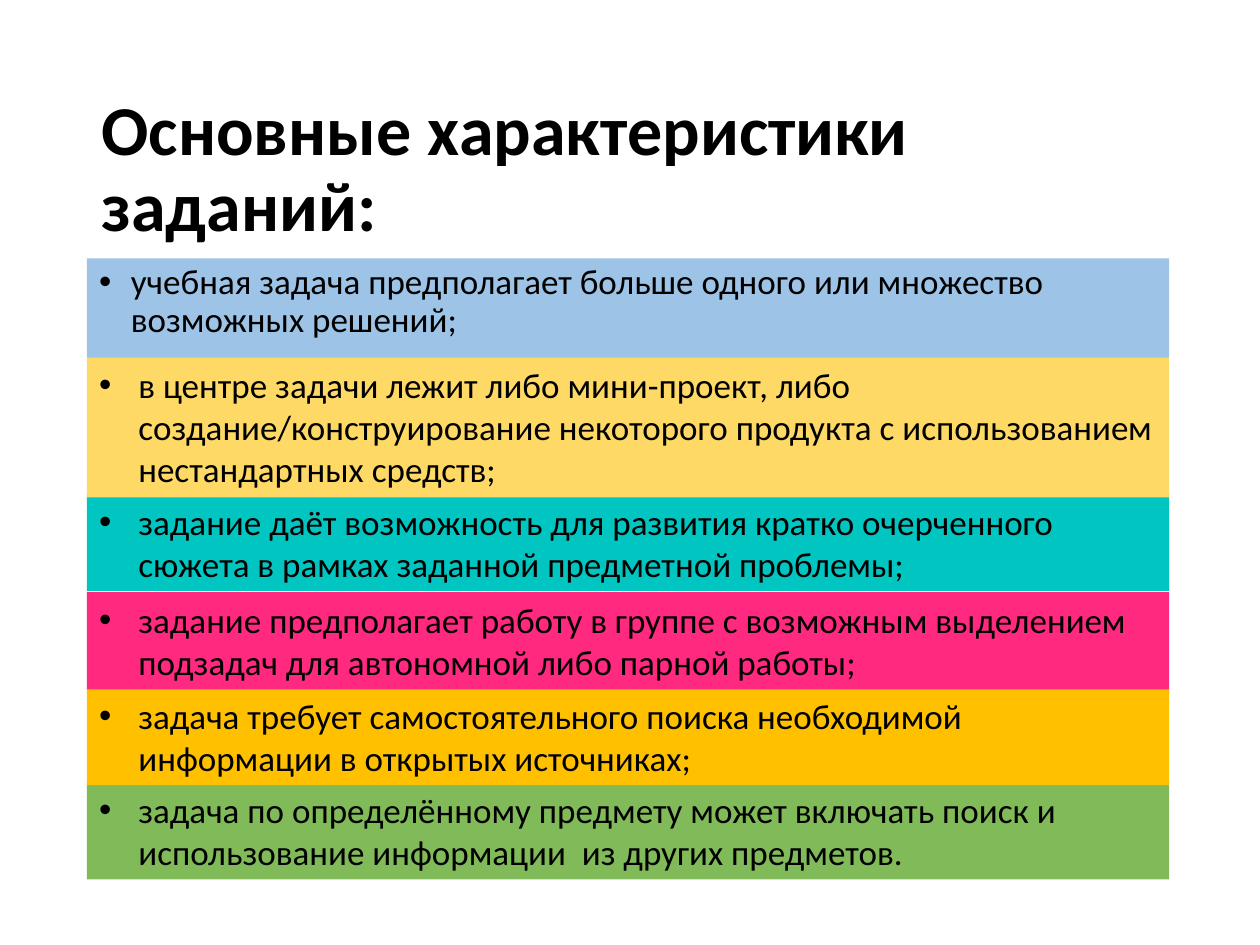
from lxml.etree import SubElement
from pptx import Presentation
from pptx.dml.color import RGBColor
from pptx.enum.shapes import MSO_SHAPE as Shape
from pptx.enum.text import MSO_ANCHOR as Anchor, PP_ALIGN as Align
from pptx.oxml.ns import qn
from pptx.util import Cm, Pt


def color(value):
    return RGBColor.from_string(value)


def write_text(shape, text, anchor, font_format, line_spacing, indent=0):
    """Fill the shape with one paragraph, bulleted when an indent (cm) is given."""
    frame = shape.text_frame
    frame.word_wrap = True
    frame.vertical_anchor = anchor
    paragraph = frame.paragraphs[0]
    paragraph.text = text
    paragraph.alignment = Align.LEFT
    paragraph.line_spacing = line_spacing
    if indent:
        properties = paragraph._p.get_or_add_pPr()
        properties.set("marL", str(Cm(indent)))
        properties.set("indent", str(-Cm(indent)))
        SubElement(properties, qn("a:buFont"), typeface="Arial")
        SubElement(properties, qn("a:buChar"), char="•")
    for name, value in font_format.items():
        setattr(paragraph.font, name, value)
    paragraph.font.color.rgb = color("000000")


TITLE_FONT = {"name": "Calibri", "size": Pt(40), "bold": True}
BAND_FONT = {"name": "Calibri", "size": Pt(20)}
BAND_LEFT, BAND_WIDTH = 1.75, 21.82

# top, height, fill, line spacing, indent, text; lower bands lie behind upper ones
BANDS = [
    (5.21, 2.01, "9DC3E6", 0.9, 0.64,
     "учебная задача предполагает больше одного или множество возможных решений;"),
    (15.77, 1.96, "81BB59", 1, 0.79,
     "задача по определённому предмету может включать поиск и "
     "использование информации  из других предметов."),
    (13.87, 1.96, "FFC000", 1, 0.79,
     "задача требует самостоятельного поиска необходимой "
     "информации в открытых источниках;"),
    (11.94, 1.96, "FF2980", 1, 0.79,
     "задание предполагает работу в группе с возможным выделением "
     "подзадач для автономной либо парной работы;"),
    (9.96, 1.96, "00C5C0", 1, 0.79,
     "задание даёт возможность для развития кратко очерченного "
     "сюжета в рамках заданной предметной проблемы;"),
    (7.21, 2.82, "FFD966", 1, 0.79,
     "в центре задачи лежит либо мини-проект, либо "
     "создание/конструирование некоторого продукта с использованием "
     "нестандартных средств;"),
]

presentation = Presentation()
presentation.slide_width = Cm(25.4)
presentation.slide_height = Cm(19.05)
slide = presentation.slides.add_slide(presentation.slide_layouts[6])

title = slide.shapes.add_textbox(Cm(1.8), Cm(2.46), Cm(21.77), Cm(1.98))
write_text(title, "Основные характеристики заданий:", Anchor.MIDDLE, TITLE_FONT, 0.9)

for top, height, fill, line_spacing, indent, text in BANDS:
    band = slide.shapes.add_shape(
        Shape.RECTANGLE, Cm(BAND_LEFT), Cm(top), Cm(BAND_WIDTH), Cm(height))
    band.shadow.inherit = False
    band.fill.solid()
    band.fill.fore_color.rgb = color(fill)
    band.line.fill.background()
    write_text(band, text, Anchor.TOP, BAND_FONT, line_spacing, indent)

presentation.save("out.pptx")
